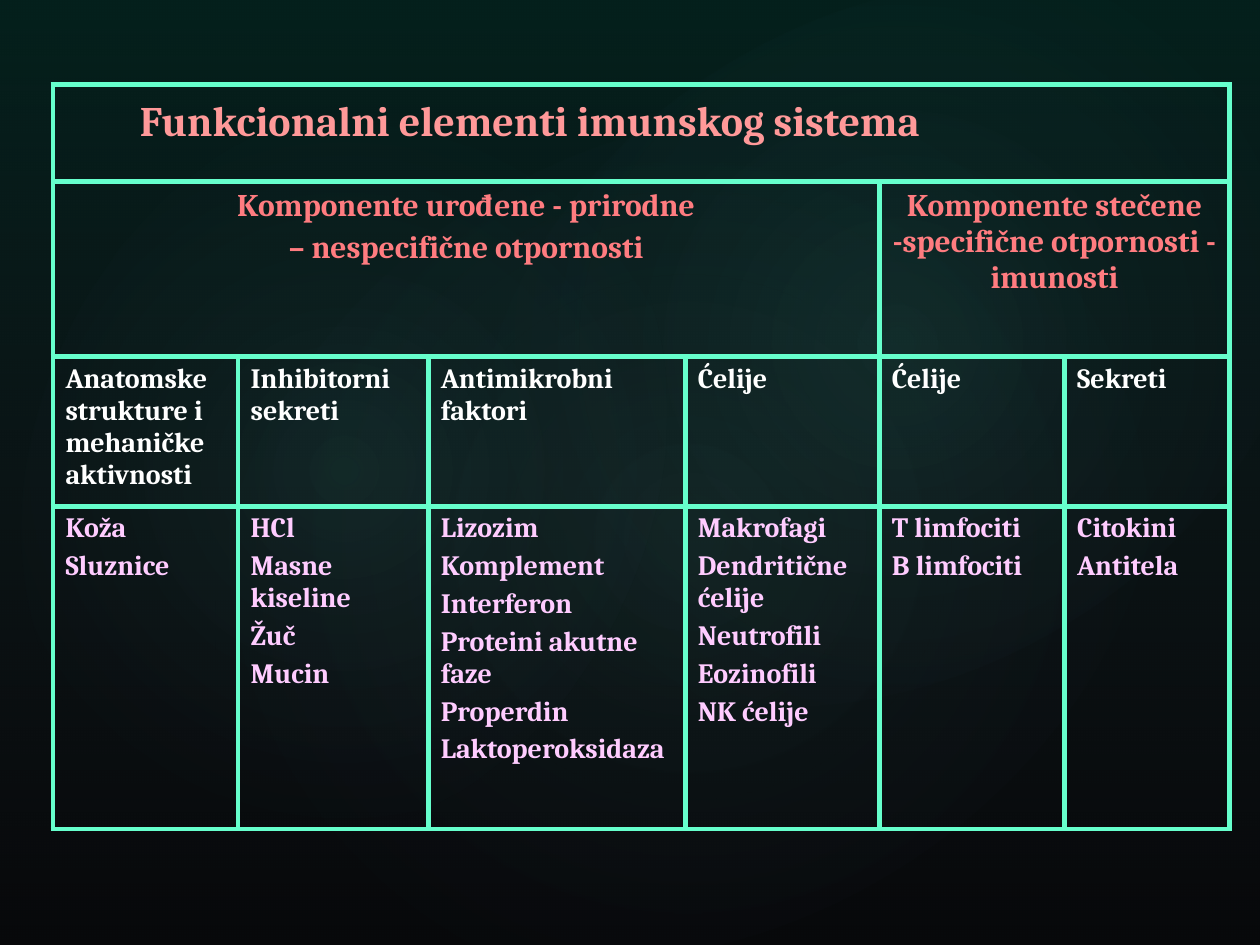
from pptx import Presentation
from pptx.dml.color import RGBColor
from pptx.enum.shapes import MSO_SHAPE as Shape
from pptx.enum.text import PP_ALIGN as Align
from pptx.oxml import parse_xml
from pptx.oxml.ns import nsdecls, qn
from pptx.util import Inches, Pt

BLACK = RGBColor(0x00, 0x00, 0x00)
WHITE = RGBColor(0xFF, 0xFF, 0xFF)
TEAL = RGBColor(0x0D, 0x5A, 0x4F)
SLATE = RGBColor(0x4E, 0x5B, 0x6F)
AQUA = RGBColor(0x5F, 0xE8, 0xD6)
MINT = RGBColor(0x66, 0xFF, 0xCC)
SALMON = RGBColor(0xFF, 0x99, 0x99)
CORAL = RGBColor(0xFF, 0x7C, 0x80)
PINK = RGBColor(0xFF, 0xCC, 0xFF)
FONT = "Cambria"

# Glows: left, top, width, height, rotation, opacity in percent
GLOWS = [
    (1.5, 1.14, 7.92, 6.24, 328.7, 7),
    (-0.3, 1.28, 6.06, 4.9, 294.3, 8),
    (3.58, 0.13, 7.09, 5.2, 328.7, 8),
]

COLUMN_WIDTHS = [1.47, 1.51, 2.04, 1.54, 1.47, 1.31]
ROW_HEIGHTS = [0.77, 1.39, 1.19, 2.56]
TITLE = "Funkcionalni elementi imunskog sistema"
INNATE = ["Komponente urođene - prirodne", "– nespecifične otpornosti"]
ACQUIRED = ["Komponente stečene -specifične otpornosti - imunosti"]
COLUMNS = [
    ("Anatomske strukture i mehaničke aktivnosti", ["Koža", "Sluznice"]),
    ("Inhibitorni sekreti", ["HCl", "Masne kiseline", "Žuč", "Mucin"]),
    ("Antimikrobni faktori", ["Lizozim", "Komplement", "Interferon",
                              "Proteini akutne faze", "Properdin",
                              "Laktoperoksidaza"]),
    ("Ćelije", ["Makrofagi", "Dendritične ćelije", "Neutrofili",
                "Eozinofili", "NK ćelije"]),
    ("Ćelije", ["T limfociti", "B limfociti"]),
    ("Sekreti", ["Citokini", "Antitela"]),
]


def add_gradient_shape(page, kind, box, stops, direction):
    """Add a borderless shape with (position, colour, opacity) stops."""
    shape = page.shapes.add_shape(kind, *[Inches(length) for length in box])
    shape.shadow.inherit = False
    shape.line.fill.background()
    shape.fill.background()
    stop_xml = "".join(
        f'<a:gs pos="{position * 1000}"><a:srgbClr val="{color}">'
        f'<a:alpha val="{opacity * 1000}"/></a:srgbClr></a:gs>'
        for position, color, opacity in stops)
    gradient = parse_xml(
        f'<a:gradFill {nsdecls("a")} rotWithShape="1">'
        f'<a:gsLst>{stop_xml}</a:gsLst>{direction}</a:gradFill>')
    properties = shape.fill._xPr
    properties.replace(properties.find(qn("a:noFill")), gradient)
    return shape


def add_backdrop(page, box):
    """Black page with a vertical tint and three soft glows."""
    page.background.fill.solid()
    page.background.fill.fore_color.rgb = BLACK
    add_gradient_shape(page, Shape.RECTANGLE, box,
                       [(0, TEAL, 36), (100, SLATE, 10)],
                       '<a:lin ang="5400000" scaled="0"/>')
    radial = ('<a:path path="circle"><a:fillToRect l="50000" t="50000" '
              'r="50000" b="50000"/></a:path>')
    left, top = box[:2]
    for x, y, width, height, rotation, opacity in GLOWS:
        glow = add_gradient_shape(page, Shape.OVAL,
                                  (left + x, top + y, width, height),
                                  [(0, AQUA, opacity), (58, SLATE, 0)], radial)
        glow.rotation = rotation


def style_cell(cell):
    """Clear the fill and draw all four borders."""
    cell.fill.background()
    properties = cell._tc.get_or_add_tcPr()
    for index, side in enumerate(("lnL", "lnR", "lnT", "lnB")):
        properties.insert(index, parse_xml(
            f'<a:{side} {nsdecls("a")} w="{Pt(3)}"><a:solidFill>'
            f'<a:srgbClr val="{MINT}"/></a:solidFill></a:{side}>'))


def write_cell(cell, lines, size, color, align=Align.LEFT):
    frame = cell.text_frame
    for index, line in enumerate(lines):
        para = frame.add_paragraph() if index else frame.paragraphs[0]
        para.alignment = align
        if index:
            para.space_before = Pt(round(size * 0.2, 1))
        span = para.add_run()
        span.text = line
        span.font.name = FONT
        span.font.size = Pt(size)
        span.font.bold = True
        span.font.color.rgb = color


def add_immunity_table(page, left, top):
    size = (sum(COLUMN_WIDTHS), sum(ROW_HEIGHTS))
    table = page.shapes.add_table(
        len(ROW_HEIGHTS), len(COLUMN_WIDTHS),
        *[Inches(length) for length in (left, top, *size)]).table
    table.first_row = table.horz_banding = False
    for column, width in zip(table.columns, COLUMN_WIDTHS):
        column.width = Inches(width)
    for row, height in zip(table.rows, ROW_HEIGHTS):
        row.height = Inches(height)
    for cell in table.iter_cells():
        style_cell(cell)

    # Title row, indented
    title = table.cell(0, 0)
    title.merge(table.cell(0, 5))
    title.margin_left = Inches(0.69)
    title.margin_top = Inches(0.11)
    write_cell(title, [TITLE], 24, SALMON)

    # Two groups of components
    for first, last, lines in ((0, 3, INNATE), (4, 5, ACQUIRED)):
        group = table.cell(1, first)
        group.merge(table.cell(1, last))
        write_cell(group, lines, 18, CORAL, Align.CENTER)

    # Column headings and their elements
    for index, (heading, elements) in enumerate(COLUMNS):
        write_cell(table.cell(2, index), [heading], 16, WHITE)
        write_cell(table.cell(3, index), elements, 16, PINK)


def main():
    deck = Presentation()
    deck.slide_width, deck.slide_height = Inches(10), Inches(7.5)
    page = deck.slides.add_slide(deck.slide_layouts[6])
    add_backdrop(page, (0, 0, 10, 7.5))
    add_immunity_table(page, 0.42, 0.67)
    deck.save("out.pptx")


if __name__ == "__main__":
    main()
